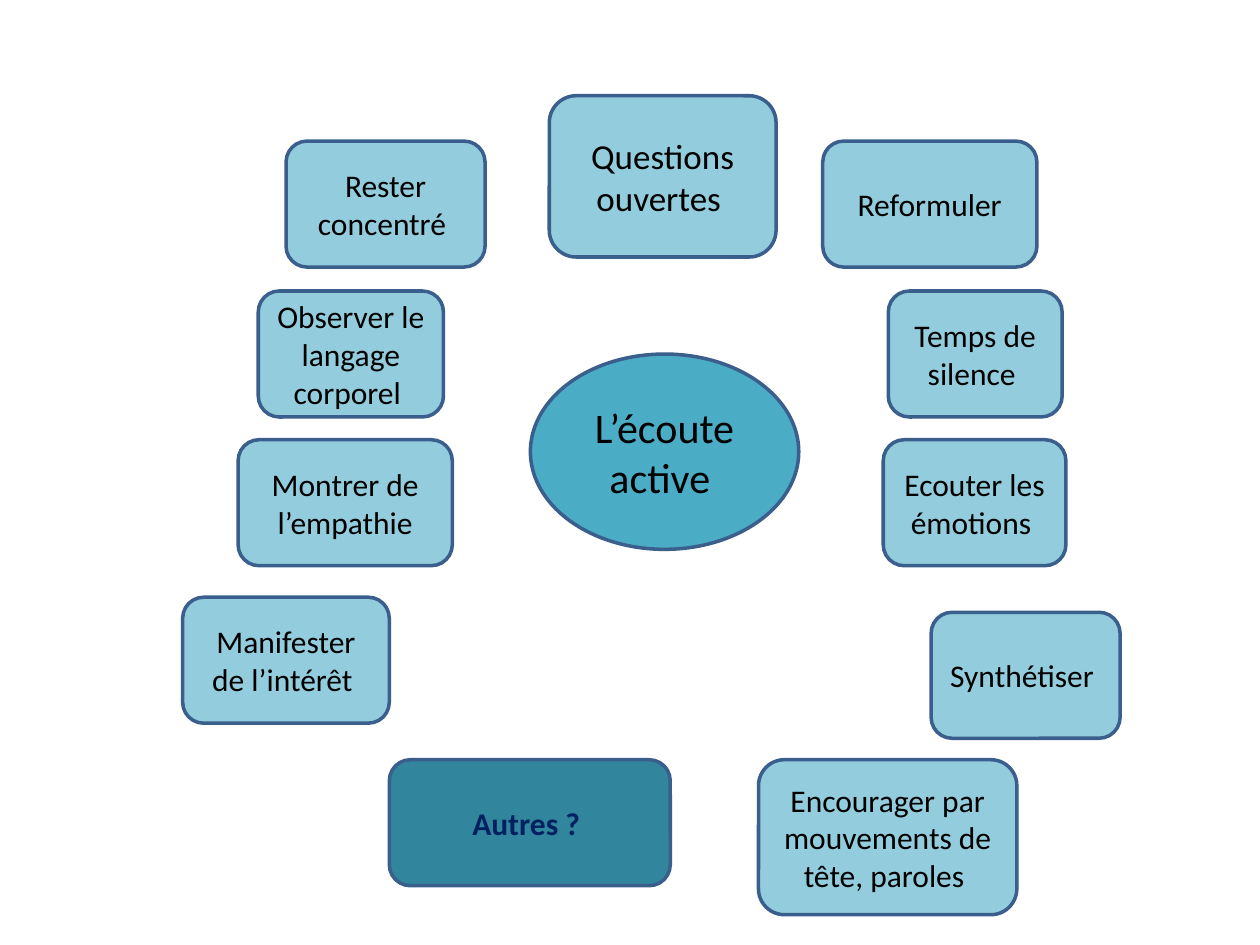
from pptx import Presentation
from pptx.dml.color import RGBColor
from pptx.enum.shapes import MSO_SHAPE
from pptx.enum.text import MSO_ANCHOR, PP_ALIGN
from pptx.util import Inches, Pt

TEAL = RGBColor(0x4B, 0xAC, 0xC6)
LIGHT_TEAL = RGBColor(0x93, 0xCD, 0xDD)
DARK_TEAL = RGBColor(0x31, 0x85, 0x9C)
OUTLINE = RGBColor(0x3A, 0x5F, 0x8C)
BLACK = RGBColor(0, 0, 0)
NAVY = RGBColor(0x00, 0x20, 0x60)

TECHNIQUES = [
    ("Reformuler", 6.53, 1.12, 1.7, 1),
    ("Observer le langage corporel ", 2.05, 2.31, 1.47, 1),
    ("Montrer de l’empathie", 1.89, 3.49, 1.7, 1),
    ("Temps de silence ", 7.05, 2.31, 1.38, 1),
    ("Synthétiser ", 7.39, 4.86, 1.5, 1),
    ("Ecouter les émotions ", 7.01, 3.49, 1.45, 1),
    ("Encourager par mouvements de tête, paroles ", 6.02, 6.03, 2.05, 1.23),
    ("Rester concentré ", 2.27, 1.12, 1.58, 1),
    ("Manifester de l’intérêt ", 1.45, 4.74, 1.64, 1),
]


def add_bubble(slide, text, left, top, width, height, outline=MSO_SHAPE.ROUNDED_RECTANGLE,
               fill=LIGHT_TEAL, size=18, color=BLACK, bold=False):
    bubble = slide.shapes.add_shape(
        outline, Inches(left), Inches(top), Inches(width), Inches(height))
    bubble.shadow.inherit = False
    bubble.fill.solid()
    bubble.fill.fore_color.rgb = fill
    bubble.line.color.rgb = OUTLINE
    bubble.line.width = Pt(2)
    frame = bubble.text_frame
    frame.word_wrap = True
    frame.vertical_anchor = MSO_ANCHOR.MIDDLE
    frame.text = text
    for paragraph in frame.paragraphs:
        paragraph.alignment = PP_ALIGN.CENTER
        paragraph.font.name = "Calibri"
        paragraph.font.size = Pt(size)
        paragraph.font.bold = bold
        paragraph.font.color.rgb = color


def main():
    presentation = Presentation()
    presentation.slide_width = Inches(10)
    presentation.slide_height = Inches(7.5)
    slide = presentation.slides.add_slide(presentation.slide_layouts[6])

    add_bubble(slide, "L’écoute active ", 4.21, 2.81, 2.13, 1.55,
               outline=MSO_SHAPE.OVAL, fill=TEAL, size=24)
    add_bubble(slide, "Questions\nouvertes ", 4.36, 0.76, 1.8, 1.28, size=20)
    for technique in TECHNIQUES:
        add_bubble(slide, *technique)
    add_bubble(slide, "Autres ? ", 3.09, 6.03, 2.23, 1,
               fill=DARK_TEAL, color=NAVY, bold=True)

    presentation.save("out.pptx")


if __name__ == "__main__":
    main()
